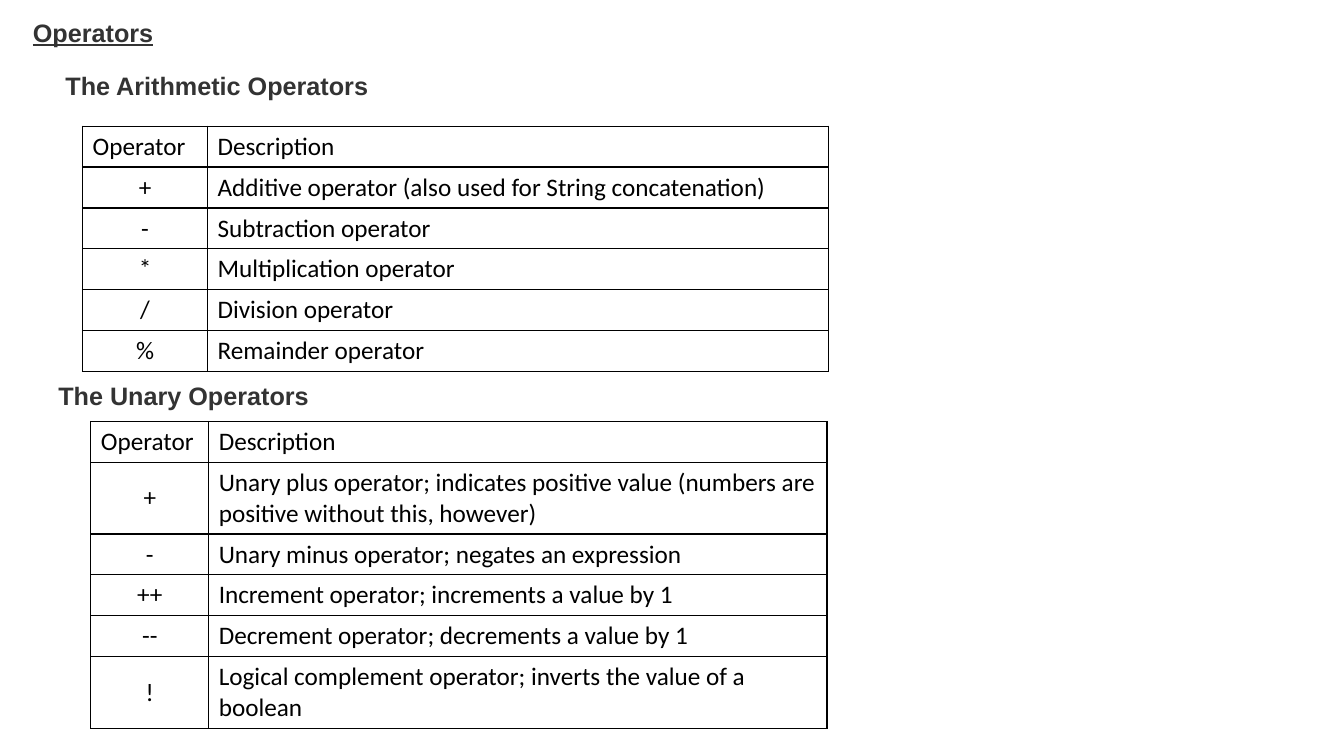
from pptx import Presentation
from pptx import util as u
from pptx.dml.color import RGBColor
from pptx.enum import text
from lxml import etree

BLACK = RGBColor(0x00, 0x00, 0x00)
WHITE = RGBColor(0xFF, 0xFF, 0xFF)
HEADING_GREY = RGBColor(0x33, 0x33, 0x33)
DRAWING_NS = "http://schemas.openxmlformats.org/drawingml/2006/main"

headings = [
    ("Operators", 0.58, 0.3, True),
    ("The Arithmetic Operators", 1.4, 1.65, False),
    ("The Unary Operators", 1.22, 9.47, False),
]

arithmetic = [
    ("Operator", "Description"),
    ("+", "Additive operator (also used for String concatenation)"),
    ("-", "Subtraction operator"),
    ("*", "Multiplication operator"),
    ("/", "Division operator"),
    ("%", "Remainder operator"),
]
unary = [
    ("Operator", "Description"),
    ("+", "Unary plus operator; indicates positive value (numbers are positive without this, however)"),
    ("-", "Unary minus operator; negates an expression"),
    ("++", "Increment operator; increments a value by 1"),
    ("--", "Decrement operator; decrements a value by 1"),
    ("!", "Logical complement operator; inverts the value of a boolean"),
]
operator_groups = [
    (arithmetic, 2.08, 3.18, (3.15, 15.65), [1.03] * 6),
    (unary, 2.29, 10.62, (2.97, 15.58), [1.02, 1.79, 1.02, 1.02, 1.02, 1.79]),
]


def add_borders(cell):
    properties = cell._tc.get_or_add_tcPr()
    for position, side in enumerate(("lnL", "lnR", "lnT", "lnB")):
        border = etree.Element(f"{{{DRAWING_NS}}}{side}", w=str(u.Pt(1)))
        fill = etree.SubElement(border, f"{{{DRAWING_NS}}}solidFill")
        etree.SubElement(fill, f"{{{DRAWING_NS}}}srgbClr", val=str(BLACK))
        properties.insert(position, border)


def set_font(paragraph, name, color):
    paragraph.font.name = name
    paragraph.font.size = u.Pt(18)
    paragraph.font.color.rgb = color


deck = Presentation()
deck.slide_width = u.Cm(33.87)
deck.slide_height = u.Cm(19.05)
slide = deck.slides.add_slide(deck.slide_layouts[6])

for rows, left, top, widths, heights in operator_groups:
    table = slide.shapes.add_table(
        len(rows), len(widths), u.Cm(left), u.Cm(top),
        u.Cm(sum(widths)), u.Cm(sum(heights))).table
    table.first_row = False
    table.horz_banding = False
    for column, width in zip(table.columns, widths):
        column.width = u.Cm(width)
    for r, (row, height) in enumerate(zip(rows, heights)):
        table.rows[r].height = u.Cm(height)
        for c, wording in enumerate(row):
            cell = table.cell(r, c)
            cell.text = wording
            cell.vertical_anchor = text.MSO_ANCHOR.MIDDLE
            cell.fill.solid()
            cell.fill.fore_color.rgb = WHITE
            add_borders(cell)
            paragraph = cell.text_frame.paragraphs[0]
            set_font(paragraph, "Calibri", BLACK)
            if r > 0 and c == 0:
                paragraph.alignment = text.PP_ALIGN.CENTER

for wording, left, top, underlined in headings:
    heading = slide.shapes.add_textbox(u.Cm(left), u.Cm(top), u.Cm(16.94), u.Cm(1.02)).text_frame
    heading.word_wrap = True
    heading.auto_size = text.MSO_AUTO_SIZE.SHAPE_TO_FIT_TEXT
    heading.text = wording
    paragraph = heading.paragraphs[0]
    set_font(paragraph, "Arial", HEADING_GREY)
    paragraph.font.bold = True
    if underlined:
        paragraph.font.underline = True

deck.save("out.pptx")
